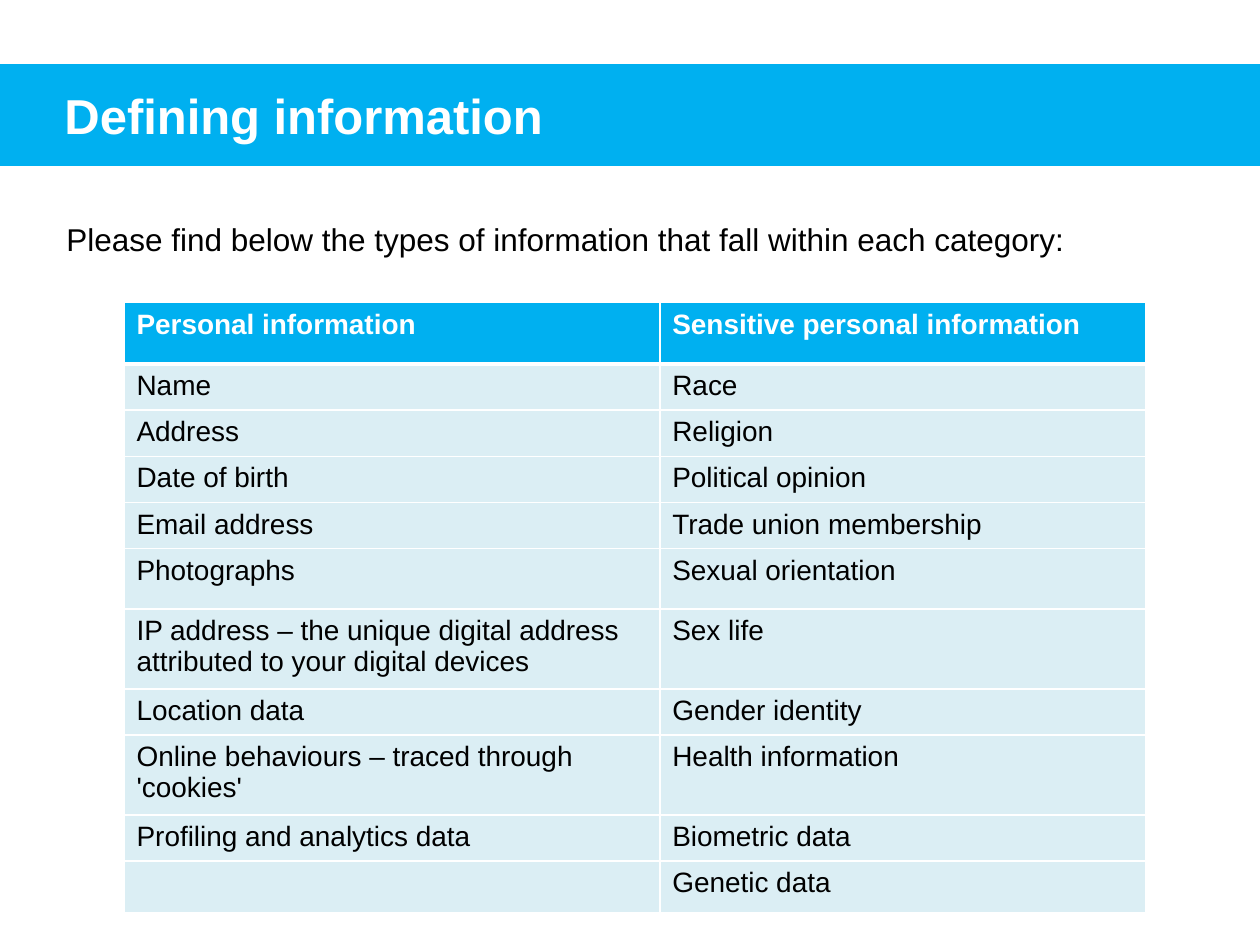
from dataclasses import dataclass

from lxml.etree import SubElement
from pptx import Presentation
from pptx.dml.color import RGBColor
from pptx.enum.text import MSO_ANCHOR, MSO_AUTO_SIZE, PP_ALIGN
from pptx.oxml.ns import qn
from pptx.util import Cm, Pt


@dataclass(frozen=True)
class Theme:
    font: str = "Arial"
    accent: str = "00B0F0"
    pale: str = "DBEEF4"
    white: str = "FFFFFF"
    black: str = "000000"
    title: int = 28
    body: int = 18
    cell: int = 16
    rule: int = 1
    header_rule: int = 3


THEME = Theme()
TITLE = "Defining information"
INTRO = "Please find below the types of information that fall within each category:"
HEADER = ("Personal information", "Sensitive personal information")
ROWS = [
    ("Name", "Race"),
    ("Address", "Religion"),
    ("Date of birth", "Political opinion"),
    ("Email address", "Trade union membership"),
    ("Photographs", "Sexual orientation"),
    ("IP address – the unique digital address attributed to your digital devices", "Sex life"),
    ("Location data", "Gender identity"),
    ("Online behaviours – traced through 'cookies'", "Health information"),
    ("Profiling and analytics data", "Biometric data"),
    ("", "Genetic data"),
]
COL_WIDTHS = (10.8, 9.8)
ROW_HEIGHT = 0.93
SPECIAL_HEIGHTS = {0: 1.24, 5: 1.22, 6: 1.61, 8: 1.61, 10: 1.0}


def format_text(tf, size, color, bold=False):
    for p in tf.paragraphs:
        p.alignment = PP_ALIGN.LEFT
        for r in p.runs:
            r.font.name = THEME.font
            r.font.size = Pt(size)
            r.font.bold = bold
            r.font.color.rgb = RGBColor.from_string(color)


def set_borders(cell, widths):
    tcPr = cell._tc.get_or_add_tcPr()
    for side, width in zip("LRTB", widths):
        ln = SubElement(tcPr, qn(f"a:ln{side}"), w=str(Pt(width)))
        fill = SubElement(ln, qn("a:solidFill"))
        SubElement(fill, qn("a:srgbClr"), val=THEME.white)


def add_title(s):
    sp = s.shapes.title
    sp.left, sp.top, sp.width, sp.height = Cm(-1.5), Cm(1.32), Cm(28.6), Cm(2)
    sp.fill.solid()
    sp.fill.fore_color.rgb = RGBColor.from_string(THEME.accent)
    sp.line.color.rgb = RGBColor.from_string(THEME.accent)
    sp.line.width = Pt(2)
    tf = sp.text_frame
    tf.text = TITLE
    tf.auto_size = MSO_AUTO_SIZE.NONE
    tf.vertical_anchor = MSO_ANCHOR.MIDDLE
    tf.margin_left = Cm(2.8)
    format_text(tf, THEME.title, THEME.white, bold=True)


def add_intro(s):
    tf = s.shapes.add_textbox(Cm(1.09), Cm(4.32), Cm(22.96), Cm(1.02)).text_frame
    tf.word_wrap = True
    tf.text = INTRO
    format_text(tf, THEME.body, THEME.black)


def add_categories(s):
    rows = [HEADER, *ROWS]
    heights = [SPECIAL_HEIGHTS.get(i, ROW_HEIGHT) for i in range(len(rows))]
    table = s.shapes.add_table(
        len(rows), len(HEADER), Cm(2.5), Cm(6.1), Cm(sum(COL_WIDTHS)), Cm(sum(heights))
    ).table
    table.horz_banding = False
    for col, width in zip(table.columns, COL_WIDTHS):
        col.width = Cm(width)
    for i, (texts, height) in enumerate(zip(rows, heights)):
        table.rows[i].height = Cm(height)
        is_header = i == 0
        top = THEME.header_rule if i == 1 else THEME.rule
        bottom = THEME.header_rule if is_header else THEME.rule
        for j, text in enumerate(texts):
            cell = table.cell(i, j)
            cell.text_frame.text = text
            set_borders(cell, (THEME.rule, THEME.rule, top, bottom))
            cell.fill.solid()
            cell.fill.fore_color.rgb = RGBColor.from_string(
                THEME.accent if is_header else THEME.pale
            )
            color = THEME.white if is_header else THEME.black
            format_text(cell.text_frame, THEME.cell, color, bold=is_header)


def main():
    prs = Presentation()
    prs.slide_width, prs.slide_height = Cm(25.4), Cm(19.05)
    s = prs.slides.add_slide(prs.slide_layouts[5])
    add_categories(s)
    add_title(s)
    add_intro(s)
    prs.save("out.pptx")


if __name__ == "__main__":
    main()
